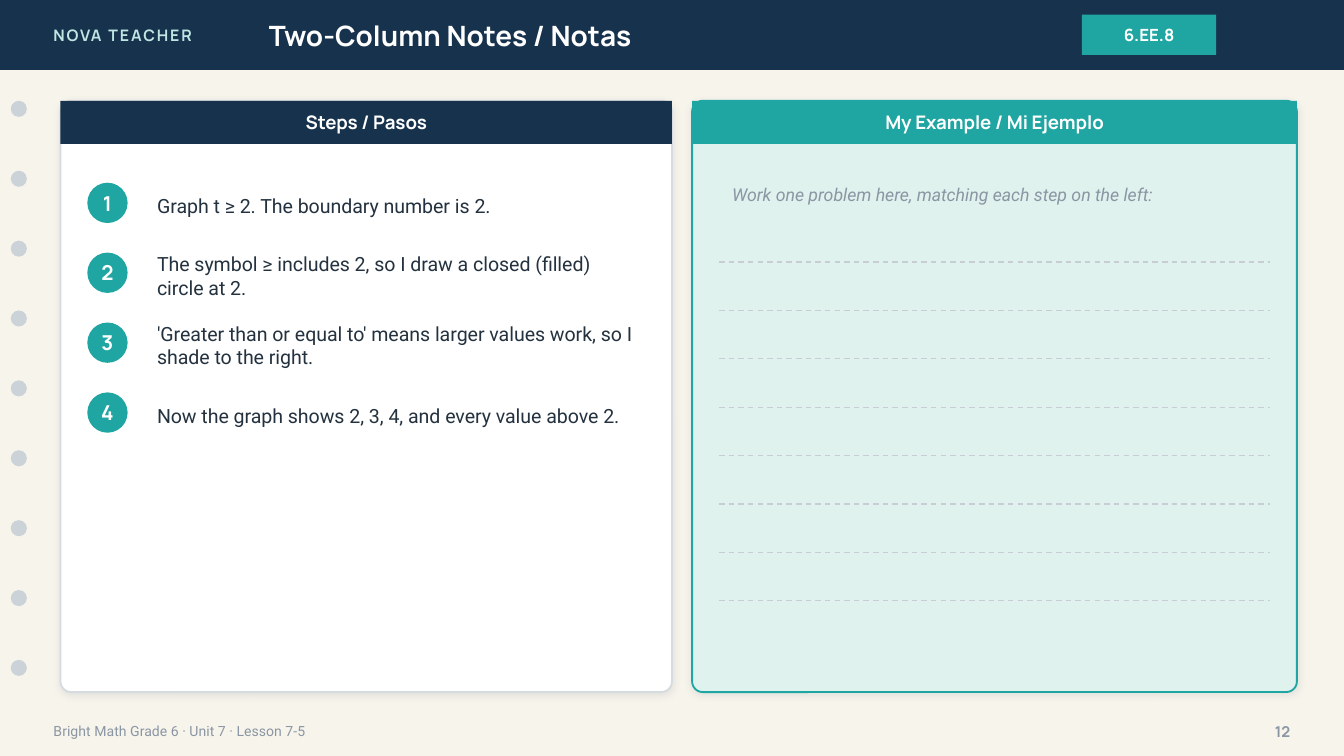
from lxml import etree
from pptx import Presentation
from pptx.dml.color import RGBColor
from pptx.enum.dml import MSO_LINE
from pptx.enum.shapes import MSO_CONNECTOR, MSO_SHAPE
from pptx.enum.text import MSO_ANCHOR, PP_ALIGN
from pptx.oxml import parse_xml
from pptx.oxml.ns import nsdecls, qn
from pptx.util import Inches, Pt

CREAM = RGBColor(0xF7, 0xF4, 0xEC)
NAVY = RGBColor(0x17, 0x32, 0x4D)
TEAL = RGBColor(0x1F, 0xA6, 0xA2)
MINT = RGBColor(0xDF, 0xF2, 0xEE)
PALE_TEAL = RGBColor(0xBF, 0xE6, 0xE2)
WHITE = RGBColor(0xFF, 0xFF, 0xFF)
INK = RGBColor(0x24, 0x32, 0x3F)
MUTED = RGBColor(0x8A, 0x96, 0xA3)
HOLE_GRAY = RGBColor(0xCB, 0xD3, 0xD9)
BORDER_GRAY = RGBColor(0xD6, 0xDB, 0xDF)
RULE_GRAY = RGBColor(0xC7, 0xCD, 0xD2)
SHADOW = RGBColor(0x1C, 0x2E, 0x42)

HEADING, BODY = "Manrope", "Roboto"
LEFT, CENTER, RIGHT = PP_ALIGN.LEFT, PP_ALIGN.CENTER, PP_ALIGN.RIGHT
SLIDE_W = 10
SLIDE_H = SLIDE_W * 9 / 16
COLUMN_TOP, COLUMN_H, COLUMN_HEAD_H = 0.75, 4.4, 0.32
HOLE_PITCH = STEP_PITCH = 0.52
RULE_PITCH = 0.36

STEPS = [
    "Graph t ≥ 2. The boundary number is 2.",
    "The symbol ≥ includes 2, so I draw a closed (filled) circle at 2.",
    "'Greater than or equal to' means larger values work, so I shade to the right.",
    "Now the graph shows 2, 3, 4, and every value above 2.",
]


def inches(*lengths):
    return [Inches(length) for length in lengths]


def write(shape, text, size, color, font=HEADING, align=LEFT, bold=False, italic=False):
    frame = shape.text_frame
    frame.word_wrap = True
    frame.vertical_anchor = MSO_ANCHOR.MIDDLE
    frame.text = text
    paragraph = frame.paragraphs[0]
    paragraph.alignment = align
    paragraph.font.name = font
    paragraph.font.size = Pt(size)
    paragraph.font.bold = bold
    paragraph.font.italic = italic
    paragraph.font.color.rgb = color


def add_label(slide, box, text, size, color, **style):
    label = slide.shapes.add_textbox(*inches(*box))
    write(label, text, size, color, **style)
    return label


def add_block(slide, kind, box, fill, border=None):
    block = slide.shapes.add_shape(kind, *inches(*box))
    block.shadow.inherit = False
    block.fill.solid()
    block.fill.fore_color.rgb = fill
    if border is None:
        block.line.fill.background()
    else:
        block.line.color.rgb = border
        block.line.width = Pt(1)
    return block


def add_soft_shadow(card):
    effects = card.element.spPr.find(qn("a:effectLst"))
    effects.append(parse_xml(
        f'<a:outerShdw {nsdecls("a")} blurRad="{Pt(4)}" dist="{Pt(1)}" dir="5400000" '
        f'algn="bl" rotWithShape="0"><a:srgbClr val="{SHADOW}">'
        '<a:alpha val="10000"/></a:srgbClr></a:outerShdw>'))


def add_header(slide, x, y, w, h):
    add_block(slide, MSO_SHAPE.RECTANGLE, (x, y, w, h), NAVY)
    series = add_label(slide, (x + 0.3, y, 2.4, h), "NOVA TEACHER", 8.5, PALE_TEAL, bold=True)
    series.text_frame.paragraphs[0].runs[0].font._element.set("spc", "100")

    title = slide.shapes.title
    title.left, title.top, title.width, title.height = inches(x + 1.9, y, 5.6, h)
    write(title, "Two-Column Notes / Notas", 15, WHITE, bold=True)
    title.element.getparent().append(title.element)

    standard = add_block(slide, MSO_SHAPE.RECTANGLE, (x + 8.05, y + 0.11, 1, 0.3), TEAL)
    write(standard, "6.EE.8", 9, WHITE, align=CENTER, bold=True)


def add_binder_holes(slide, x, y, size, count):
    for index in range(count):
        add_block(slide, MSO_SHAPE.OVAL, (x, y + index * HOLE_PITCH, size, size), HOLE_GRAY)


def add_footer(slide, x, y, w, h):
    lesson = " · ".join(["Bright Math Grade 6", "Unit 7", "Lesson 7-5"])
    add_label(slide, (x, y, 7, h), lesson, 7.5, MUTED, font=BODY)
    add_label(slide, (x + w - 0.5, y, 0.5, h), "12", 8, MUTED, align=RIGHT, bold=True)


def add_column(slide, x, y, w, h, heading, fill, border, accent):
    card = add_block(slide, MSO_SHAPE.ROUNDED_RECTANGLE, (x, y, w, h), fill, border)
    card.adjustments[0] = 0.018
    add_soft_shadow(card)
    head = add_block(slide, MSO_SHAPE.RECTANGLE, (x, y, w, COLUMN_HEAD_H), accent)
    write(head, heading, 10, WHITE, align=CENTER, bold=True)


def add_steps_column(slide, x, y, w, h):
    add_column(slide, x, y, w, h, "Steps / Pasos", WHITE, BORDER_GRAY, NAVY)
    for number, step in enumerate(STEPS, start=1):
        top = y + 0.55 + (number - 1) * STEP_PITCH
        badge = add_block(slide, MSO_SHAPE.OVAL, (x + 0.2, top + 0.06, 0.3, 0.3), TEAL)
        frame = badge.text_frame
        frame.margin_left = frame.margin_right = frame.margin_top = frame.margin_bottom = 0
        write(badge, str(number), 11, WHITE, align=CENTER, bold=True)
        add_label(slide, (x + 0.62, top, w - 0.77, 0.46), step, 10.5, INK, font=BODY)


def add_example_column(slide, x, y, w, h):
    add_column(slide, x, y, w, h, "My Example / Mi Ejemplo", MINT, TEAL, TEAL)
    left, right = x + 0.2, x + w - 0.2
    add_label(slide, (left, y + 0.5, right - left, 0.4),
              "Work one problem here, matching each step on the left:",
              9.5, MUTED, font=BODY, italic=True)
    for index in range(8):
        rule_y = y + 1.2 + index * RULE_PITCH
        rule = slide.shapes.add_connector(
            MSO_CONNECTOR.STRAIGHT, *inches(left, rule_y, right, rule_y))
        rule.line.color.rgb = RULE_GRAY
        rule.line.width = Pt(0.75)
        rule.line.dash_style = MSO_LINE.DASH
        etree.SubElement(rule.element.spPr, qn("a:effectLst"))


def main():
    deck = Presentation()
    deck.slide_width, deck.slide_height = inches(SLIDE_W, SLIDE_H)
    slide = deck.slides.add_slide(deck.slide_layouts[5])
    slide.background.fill.solid()
    slide.background.fill.fore_color.rgb = CREAM

    add_header(slide, 0, 0, SLIDE_W, 0.52)
    add_binder_holes(slide, 0.08, COLUMN_TOP, 0.12, 9)
    add_footer(slide, 0.3, 5.3, 9.4, 0.28)
    add_steps_column(slide, 0.45, COLUMN_TOP, 4.55, COLUMN_H)
    add_example_column(slide, 5.15, COLUMN_TOP, 4.5, COLUMN_H)
    deck.save("out.pptx")


if __name__ == "__main__":
    main()
